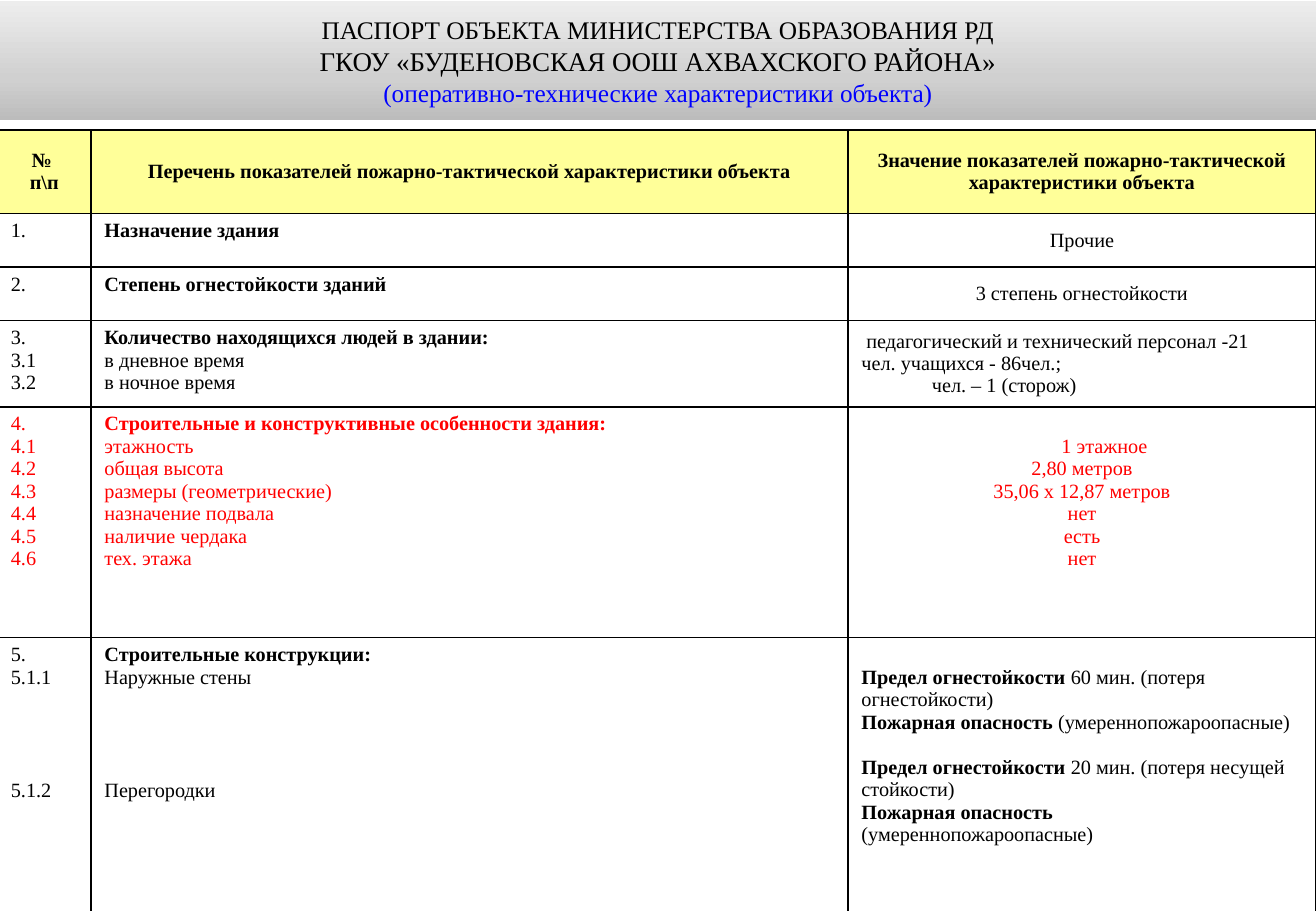
from copy import deepcopy
from dataclasses import dataclass

import pptx
import pptx.dml.color
import pptx.enum.text
import pptx.oxml
import pptx.oxml.ns
import pptx.util
from pptx.dml.color import RGBColor
from pptx.enum.text import MSO_ANCHOR, PP_ALIGN
from pptx.util import Inches, Pt

FONT = "Times New Roman"
BLACK = RGBColor(0x00, 0x00, 0x00)
WHITE = RGBColor(0xFF, 0xFF, 0xFF)
RED = RGBColor(0xFF, 0x00, 0x00)
BLUE = RGBColor(0x00, 0x00, 0xFF)
HEADER_YELLOW = RGBColor(0xFF, 0xFF, 0x99)
BANNER_STOPS = [
    (0, RGBColor(0xBC, 0xBC, 0xBC)),
    (0.35, RGBColor(0xD0, 0xD0, 0xD0)),
    (1, RGBColor(0xED, 0xED, 0xED)),
]
LINE_HEIGHT = 13.4  # points, at 12 pt text

HEADING = [
    ("ПАСПОРТ ОБЪЕКТА МИНИСТЕРСТВА ОБРАЗОВАНИЯ РД", 15, BLACK),
    ("ГКОУ «БУДЕНОВСКАЯ ООШ АХВАХСКОГО РАЙОНА»", 16, BLACK),
    ("(оперативно-технические характеристики объекта)", 15, BLUE),
]


@dataclass
class Line:
    """A paragraph: bold lead, plain text, blank lines above, left indent in inches."""
    lead: str = ""
    text: str = ""
    gap: int = 0
    indent: float = 0


@dataclass
class Cell:
    lines: list
    centred: bool = False
    middle: bool = False
    blank_top: int = 0


def plain(*texts):
    return [Line(text=text) for text in texts]


def bold(*texts):
    return [Line(text) for text in texts]


def value(text):
    return Cell(plain(text), centred=True, middle=True)


def header(*texts):
    return Cell(bold(*texts), centred=True, middle=True)


COLUMN_WIDTHS = [0.77, 6.23, 3.85]

# Row height, fill, text colour, cells
ROWS = [
    (0.69, HEADER_YELLOW, BLACK, [
        header("№ ", "п\\п"),
        header("Перечень показателей пожарно-тактической характеристики объекта"),
        header("Значение показателей пожарно-тактической характеристики объекта"),
    ]),
    (0.44, WHITE, BLACK, [
        Cell(plain("1.")), Cell(bold("Назначение здания")), value("Прочие"),
    ]),
    (0.44, WHITE, BLACK, [
        Cell(plain("2.")), Cell(bold("Степень огнестойкости зданий")),
        value("3 степень огнестойкости"),
    ]),
    (0.71, WHITE, BLACK, [
        Cell(plain("3.", "3.1", "3.2")),
        Cell(bold("Количество находящихся людей в здании:")
             + plain("в дневное время", "в ночное время")),
        Cell([Line(text="педагогический и технический персонал -21", indent=0.04),
              Line(text="чел. учащихся - 86чел.;"),
              Line(text="чел. – 1 (сторож)", indent=0.58)], middle=True),
    ]),
    (1.9, WHITE, RED, [
        Cell(plain("4.", "4.1", "4.2", "4.3", "4.4", "4.5", "4.6")),
        Cell(bold("Строительные и конструктивные особенности здания:")
             + plain("этажность", "общая высота", "размеры (геометрические)",
                     "назначение подвала", "наличие чердака", "тех. этажа")),
        Cell([Line(text="1 этажное", indent=0.37)]
             + plain("2,80 метров", "35,06 х 12,87 метров", "нет", "есть", "нет"),
             centred=True, blank_top=1),
    ]),
    (2.33, WHITE, BLACK, [
        Cell(plain("5.", "5.1.1") + [Line(text="5.1.2", gap=4)]),
        Cell(bold("Строительные конструкции:") + plain("Наружные стены")
             + [Line(text="Перегородки", gap=4)]),
        Cell([Line("Предел огнестойкости ", "60 мин. (потеря огнестойкости)"),
              Line("Пожарная опасность ", "(умереннопожароопасные)"),
              Line("Предел огнестойкости ", "20 мин. (потеря несущей стойкости)", gap=1),
              Line("Пожарная опасность"),
              Line(text="(умереннопожароопасные)")], blank_top=1),
    ]),
]


def add_banner(slide, left, top, width, height):
    title = slide.shapes.title
    title.left, title.top, title.width, title.height = left, top, width, height

    title.fill.gradient()
    title.fill.gradient_angle = 90
    stop_list = title._element.spPr.find(".//" + pptx.oxml.ns.qn("a:gsLst"))
    stop_list.append(deepcopy(stop_list[0]))
    for stop, (position, color) in zip(title.fill.gradient_stops, BANNER_STOPS):
        stop.position = position
        stop.color.rgb = color

    frame = title.text_frame
    frame.text = "\n".join(text for text, _, _ in HEADING)
    frame.auto_size = pptx.enum.text.MSO_AUTO_SIZE.NONE
    frame.word_wrap = True
    frame.vertical_anchor = MSO_ANCHOR.MIDDLE
    frame.margin_left = frame.margin_right = Inches(0.09)
    for paragraph, (_, size, color) in zip(frame.paragraphs, HEADING):
        paragraph.alignment = PP_ALIGN.CENTER
        paragraph.font.name = FONT
        paragraph.font.size = Pt(size)
        paragraph.font.color.rgb = color


def add_borders(table_cell):
    properties = table_cell._tc.get_or_add_tcPr()
    for side in ("lnL", "lnR", "lnT", "lnB"):
        properties.append(pptx.oxml.parse_xml(
            f'<a:{side} {pptx.oxml.ns.nsdecls("a")} w="12700"><a:solidFill>'
            f'<a:srgbClr val="{BLACK}"/></a:solidFill></a:{side}>'))


def fill_cell(table_cell, content, fill, color):
    add_borders(table_cell)
    table_cell.fill.solid()
    table_cell.fill.fore_color.rgb = fill
    table_cell.vertical_anchor = MSO_ANCHOR.MIDDLE if content.middle else MSO_ANCHOR.TOP
    table_cell.margin_left = table_cell.margin_right = Inches(0.11)
    table_cell.margin_top = Inches(0.05) + Pt(LINE_HEIGHT * content.blank_top)
    table_cell.margin_bottom = Inches(0.05)

    frame = table_cell.text_frame
    for index, line in enumerate(content.lines):
        paragraph = frame.add_paragraph() if index else frame.paragraphs[0]
        paragraph.alignment = PP_ALIGN.CENTER if content.centred else PP_ALIGN.LEFT
        paragraph.font.name = FONT
        paragraph.font.size = Pt(12)
        paragraph.font.color.rgb = color
        if line.gap:
            paragraph.space_before = Pt(LINE_HEIGHT * line.gap)
        if line.indent:
            paragraph._p.get_or_add_pPr().set("marL", str(Inches(line.indent)))
        for text, is_bold in ((line.lead, True), (line.text, False)):
            if text:
                run = paragraph.add_run()
                run.text = text
                run.font.bold = is_bold


def add_characteristics(slide, left, top, width, height):
    table = slide.shapes.add_table(
        len(ROWS), len(COLUMN_WIDTHS), left, top, width, height).table
    table.first_row = table.horz_banding = False
    for column, column_width in zip(table.columns, COLUMN_WIDTHS):
        column.width = Inches(column_width)
    for row, (row_height, fill, color, contents) in zip(table.rows, ROWS):
        row.height = Inches(row_height)
        for table_cell, content in zip(row.cells, contents):
            fill_cell(table_cell, content, fill, color)


def main():
    presentation = pptx.Presentation()
    presentation.slide_width = Inches(10.83)
    presentation.slide_height = Inches(7.5)
    slide = presentation.slides.add_slide(presentation.slide_layouts[5])
    add_banner(slide, 0, Inches(0.01), presentation.slide_width, Inches(0.98))
    add_characteristics(slide, Inches(-0.02), Inches(1.07), Inches(10.85), Inches(6.52))
    presentation.save("out.pptx")


if __name__ == "__main__":
    main()
